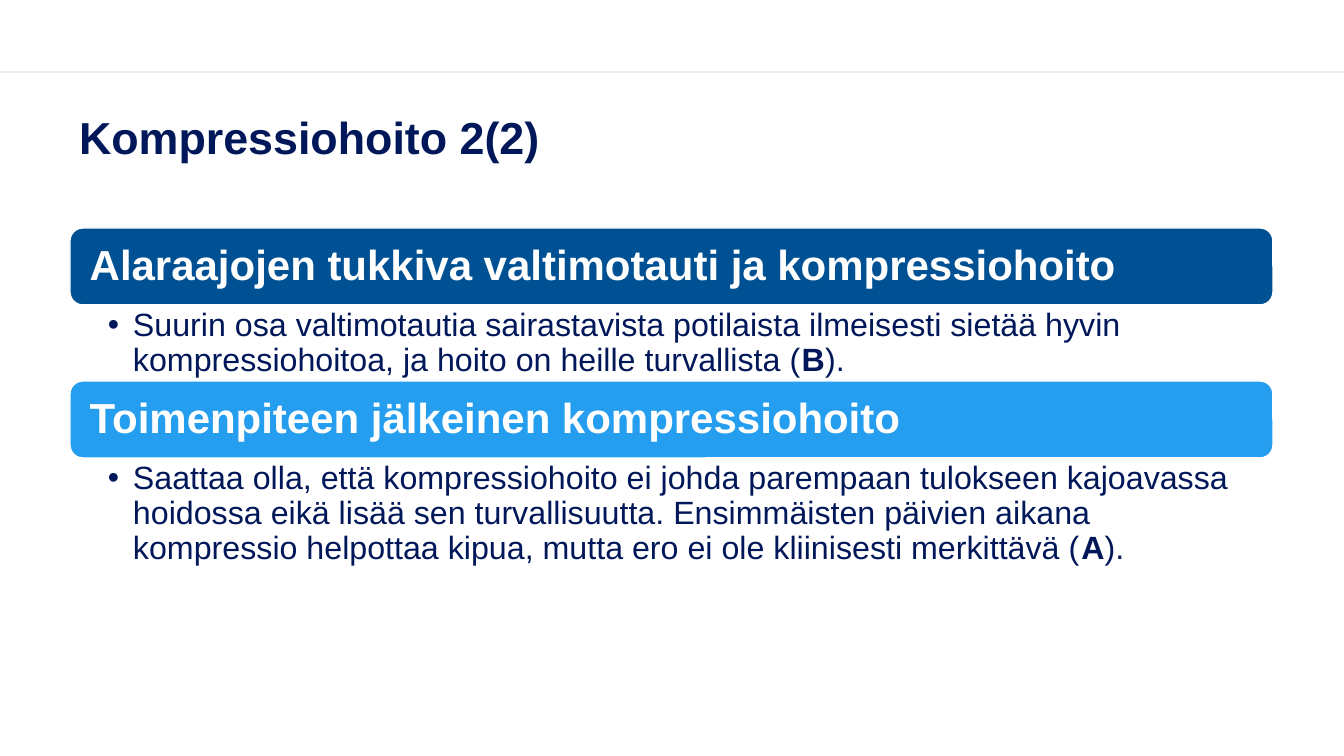
import pptx
import pptx.util
import pptx.dml.color
import pptx.enum.shapes
import pptx.enum.text
import pptx.oxml
import pptx.oxml.ns

TITLE = "Kompressiohoito 2(2)"
SECTIONS = [
    {
        "heading": "Alaraajojen tukkiva valtimotauti ja kompressiohoito",
        "fill": "005193",
        "height": 76,
        "spans": [
            ("Suurin osa valtimotautia sairastavista potilaista ilmeisesti sietää hyvin "
             "kompressiohoitoa, ja hoito on heille turvallista (", False),
            ("B", True),
            (").", False),
        ],
    },
    {
        "heading": "Toimenpiteen jälkeinen kompressiohoito",
        "fill": "269EEF",
        "height": 110,
        "spans": [
            ("Saattaa olla, että kompressiohoito ei johda parempaan tulokseen kajoavassa "
             "hoidossa eikä lisää sen turvallisuutta. Ensimmäisten päivien aikana "
             "kompressio helpottaa kipua, mutta ero ei ole kliinisesti merkittävä (", False),
            ("A", True),
            (").", False),
        ],
    },
]
NAVY, WHITE, BLACK = "001759", "FFFFFF", "000000"
PAGE_WIDTH, PAGE_HEIGHT = 1344, 756
RULE_TOP = 72
LEFT, WIDTH = 70, 1203
TITLE_BOX = (69, 94, WIDTH, 92)
FIRST_TOP, HEADING_HEIGHT = 228, 77
TITLE_INSETS = (10, 5, 10, 5)
HEADING_INSETS = (16, 16, 16, 16)
BODY_INSETS = (38, 4, 23, 4)
BULLET_INDENT = 25
MIDDLE = pptx.enum.text.MSO_ANCHOR.MIDDLE
TOP = pptx.enum.text.MSO_ANCHOR.TOP


def px(length):
    return pptx.util.Emu(round(length * 914400 / 100.8))


def color(value):
    return pptx.dml.color.RGBColor.from_string(value)


def xml(tag, attributes):
    namespace = pptx.oxml.ns.nsdecls("a")
    return pptx.oxml.parse_xml(f"<a:{tag} {namespace} {attributes}/>")


def set_values(target, values):
    for name, value in values.items():
        setattr(target, name, value)


def write(box, spans, size, ink, insets, anchor, bullet=False):
    frame = box.text_frame
    sides = ("margin_left", "margin_top", "margin_right", "margin_bottom")
    set_values(frame, {
        "word_wrap": True,
        "auto_size": pptx.enum.text.MSO_AUTO_SIZE.NONE,
        "vertical_anchor": anchor,
        **{side: px(inset) for side, inset in zip(sides, insets)},
    })
    para = frame.paragraphs[0]
    set_values(para, {"alignment": pptx.enum.text.PP_ALIGN.LEFT, "line_spacing": 0.9})
    if bullet:
        properties = para._p.get_or_add_pPr()
        properties.set("marL", str(px(BULLET_INDENT)))
        properties.set("indent", str(-px(BULLET_INDENT)))
        properties.append(xml("buFont", 'typeface="Arial"'))
        properties.append(xml("buChar", 'char="•"'))
    for text, bold in spans:
        span = para.add_run()
        span.text = text
        set_values(span.font, {"name": "Arial", "size": pptx.util.Pt(size), "bold": bold})
        span.font.color.rgb = color(ink)


def add_rule(page):
    rule = page.shapes.add_connector(
        pptx.enum.shapes.MSO_CONNECTOR.STRAIGHT,
        0, px(RULE_TOP), px(PAGE_WIDTH), px(RULE_TOP))
    rule.line.width = pptx.util.Pt(1)
    rule.line.color.rgb = color(BLACK)
    shade = rule.line._ln.find(".//" + pptx.oxml.ns.qn("a:srgbClr"))
    shade.append(xml("alpha", 'val="10000"'))
    rule._element.spPr.append(xml("effectLst", ""))


def add_heading(page, section, top):
    box = page.shapes.add_shape(
        pptx.enum.shapes.MSO_SHAPE.ROUNDED_RECTANGLE,
        px(LEFT), px(top), px(WIDTH), px(HEADING_HEIGHT))
    box.shadow.inherit = False
    box.fill.solid()
    box.fill.fore_color.rgb = color(section["fill"])
    box.line.color.rgb = color(WHITE)
    box.line.width = pptx.util.Pt(1)
    write(box, [(section["heading"], True)], 30, WHITE, HEADING_INSETS, MIDDLE)


def add_body(page, section, top):
    box = page.shapes.add_textbox(px(LEFT), px(top), px(WIDTH), px(section["height"]))
    write(box, section["spans"], 23, NAVY, BODY_INSETS, TOP, bullet=True)


def main():
    deck = pptx.Presentation()
    set_values(deck, {"slide_width": px(PAGE_WIDTH), "slide_height": px(PAGE_HEIGHT)})
    page = deck.slides.add_slide(deck.slide_layouts[5])
    add_rule(page)
    title = page.shapes.title
    set_values(title, dict(zip(("left", "top", "width", "height"), map(px, TITLE_BOX))))
    write(title, [(TITLE, True)], 32, NAVY, TITLE_INSETS, MIDDLE)
    top = FIRST_TOP
    for section in SECTIONS:
        add_heading(page, section, top)
        add_body(page, section, top + HEADING_HEIGHT)
        top += HEADING_HEIGHT + section["height"]
    deck.save("out.pptx")


if __name__ == "__main__":
    main()
